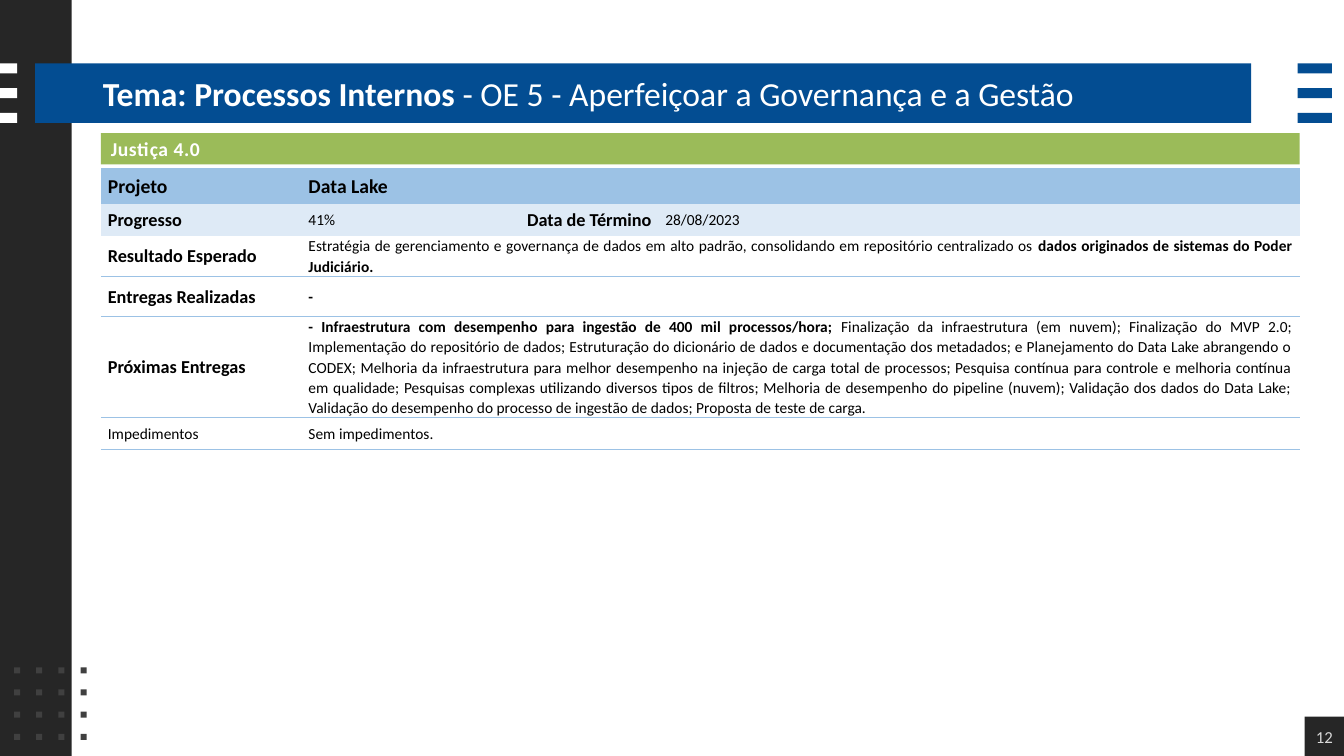
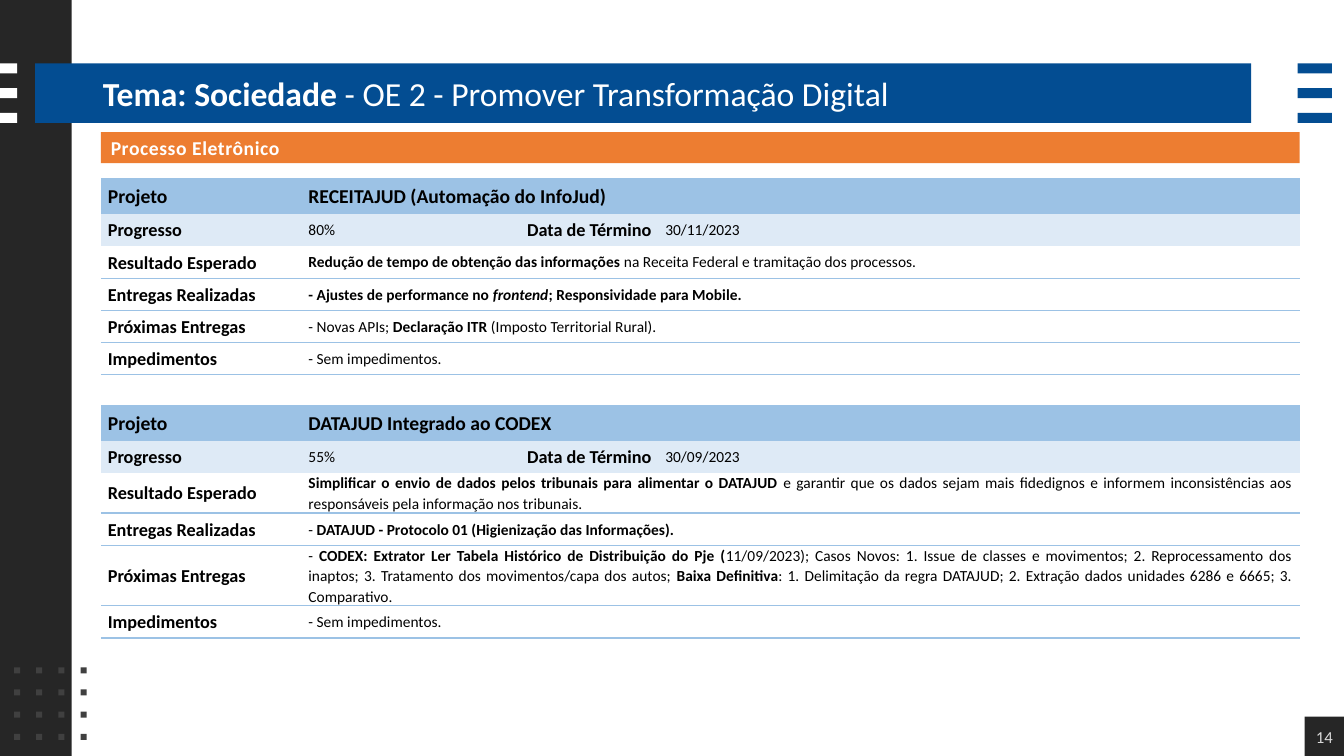
from lxml.etree import SubElement
from pptx import Presentation
from pptx.dml.color import RGBColor
from pptx.enum.shapes import MSO_SHAPE
from pptx.enum.text import MSO_ANCHOR, MSO_AUTO_SIZE, PP_ALIGN
from pptx.oxml.ns import qn
from pptx.util import Inches, Pt

THEME = dict(
    font="Calibri", dark="262626", blue="034D92", white="FFFFFF", dot="404040",
    page="D9D9D9", text="000000", head="9CC2E5", light="DEEAF6",
    green="9BBB59", orange="ED7D31",
    title_size=24, head_size=14, label_size=13, body_size=11, page_size=12)
NO_STYLE = "{2D5ABB26-0587-4C30-8999-92F81FD0307C}"

# Grid, in inches
W, H = 13.33, 7.5
LEFT, COLS = 1, (1.99, 1.77, 1.77, 6.36)
HEAD_H, ROW_H, LINE_H = 0.35, 0.32, 0.2
BAND_H = 0.31
BAR_TOP, BAR_STEP, BAR_H = 0.63, 0.245, 0.1
DOT_LEFT, DOT_TOP, DOT_STEP, DOT_SIZE = 0.14, 6.62, 0.22, 0.06
PAGE_BOX = (12.94, 7.11, 0.39, 0.39)

# Content: runs are (text, flags), with b for bold and i for italic;
# each row is (label, label flags, text lines, runs)
SLIDES = [
    dict(title=("Tema: Processos Internos ", "- OE 5 - Aperfeiçoar a Governança e a Gestão"),
         page="12", band=("Justiça 4.0", "green", 1.32),
         projects=[dict(
             top=1.67, name="Data Lake", progress="41%", end="28/08/2023",
             rows=[
                 ("Resultado Esperado", "b", 2, [
                     ("Estratégia de gerenciamento e governança de dados em alto padrão, "
                      "consolidando em repositório centralizado os ", ""),
                     ("dados originados de sistemas do Poder Judiciário.", "b")]),
                 ("Entregas Realizadas", "b", 2, [("-", "b")]),
                 ("Próximas Entregas", "b", 5, [
                     ("- Infraestrutura com desempenho para ingestão de "
                      "400 mil processos/hora;", "b"),
                     (" Finalização da infraestrutura (em nuvem); Finalização do MVP 2.0; "
                      "Implementação do repositório de dados; Estruturação do dicionário de "
                      "dados e documentação dos metadados; e Planejamento do Data Lake "
                      "abrangendo o CODEX; Melhoria da infraestrutura para melhor desempenho "
                      "na injeção de carga total de processos; Pesquisa contínua para controle "
                      "e melhoria contínua em qualidade; Pesquisas complexas utilizando "
                      "diversos tipos de filtros; Melhoria de desempenho do pipeline (nuvem); "
                      "Validação dos dados do Data Lake; Validação do desempenho do processo "
                      "de ingestão de dados; Proposta de teste de carga.", "")]),
                 ("Impedimentos", "", 1, [("Sem impedimentos.", "")]),
             ])]),
    dict(title=("Tema: Sociedade ", "- OE 2 - Promover Transformação Digital"),
         page="14", band=("Processo Eletrônico", "orange", 1.31),
         projects=[
             dict(top=1.77, name="RECEITAJUD (Automação do InfoJud)",
                  progress="80%", end="30/11/2023",
                  rows=[
                      ("Resultado Esperado", "b", 1, [
                          ("Redução de tempo de obtenção das informações ", "b"),
                          ("na Receita Federal e tramitação dos processos.", "")]),
                      ("Entregas Realizadas", "b", 1, [
                          ("- Ajustes de performance no ", "b"), ("frontend", "bi"),
                          ("; Responsividade para Mobile.", "b")]),
                      ("Próximas Entregas", "b", 1, [
                          ("- Novas APIs; ", ""), ("Declaração ITR", "b"),
                          (" (Imposto Territorial Rural).", "")]),
                      ("Impedimentos", "b", 1, [("- Sem impedimentos.", "")]),
                  ]),
             dict(top=4.02, name="DATAJUD Integrado ao CODEX",
                  progress="55%", end="30/09/2023",
                  rows=[
                      ("Resultado Esperado", "b", 2, [
                          ("Simplificar o envio de dados pelos tribunais para alimentar "
                           "o DATAJUD ", "b"),
                          ("e garantir que os dados sejam mais fidedignos e informem "
                           "inconsistências aos responsáveis pela informação nos "
                           "tribunais.", "")]),
                      ("Entregas Realizadas", "b", 1, [
                          ("- ", ""),
                          ("DATAJUD - Protocolo 01 (Higienização das Informações).", "b")]),
                      ("Próximas Entregas", "b", 3, [
                          ("- ", ""),
                          ("CODEX: Extrator Ler Tabela Histórico de Distribuição do Pje (", "b"),
                          ("11/09/2023); Casos Novos: 1. Issue de classes e movimentos; "
                           "2. Reprocessamento dos inaptos; 3. Tratamento dos "
                           "movimentos/capa dos autos; ", ""),
                          ("Baixa Definitiva", "b"),
                          (": 1. Delimitação da regra DATAJUD; 2. Extração dados unidades "
                           "6286 e 6665; 3. Comparativo.", "")]),
                      ("Impedimentos", "b", 1, [("- Sem impedimentos.", "")]),
                  ]),
         ]),
]


def rgb(name):
    return RGBColor.from_string(THEME[name])


def place(sp, *box):
    for side, value in zip(("left", "top", "width", "height"), box):
        setattr(sp, side, Inches(value))


def write(p, runs, size, color="text", align=PP_ALIGN.LEFT, spc=None):
    p.alignment = align
    for text, flags in runs:
        r = p.add_run()
        r.text = text
        look = dict(name=THEME["font"], size=Pt(THEME[size]),
                    bold="b" in flags, italic="i" in flags)
        for key, value in look.items():
            setattr(r.font, key, value)
        r.font.color.rgb = rgb(color)
        if spc:
            r.font._element.set("spc", str(spc))


def add_rect(s, color, *box):
    sp = s.shapes.add_shape(MSO_SHAPE.RECTANGLE, *map(Inches, box))
    sp.shadow.inherit = False
    sp.fill.solid()
    sp.fill.fore_color.rgb = rgb(color)
    sp.line.fill.background()
    return sp


def build_frame(s, layout):
    """Draw the shared decoration and hand it over to the layout."""
    rects = [("dark", 0, 0, 0.71, H), ("blue", 0.35, BAR_TOP, 12.06, 0.59)]
    for color, left, width in (("white", 0, 0.17), ("blue", 12.87, 0.34)):
        rects += [(color, left, BAR_TOP + i * BAR_STEP, width, BAR_H) for i in range(3)]
    rects += [("dot", DOT_LEFT + col * DOT_STEP, DOT_TOP + row * DOT_STEP, DOT_SIZE, DOT_SIZE)
              for row in range(4) for col in range(4)]
    rects.append(("dark", *PAGE_BOX))
    for rect in rects:
        layout.shapes.element.append(add_rect(s, *rect).element)


def prepare_layout(layout):
    for ph in list(layout.placeholders):
        if ph.placeholder_format.idx:
            ph.element.getparent().remove(ph.element)
        else:
            place(ph, 0.92, 0.64, 11.5, 0.56)


def add_borders(cell, sides):
    tcPr = cell._tc.get_or_add_tcPr()
    for side in sides:
        ln = SubElement(tcPr, qn(f"a:ln{side}"), w=str(Pt(1)))
        fill = SubElement(ln, qn("a:solidFill"))
        SubElement(fill, qn("a:srgbClr"), val=THEME["head"])


def fill_cell(cell, runs, size, align=PP_ALIGN.LEFT):
    p = cell.text_frame.paragraphs[0]
    p.line_spacing, p.space_after = 1.07, Pt(8)
    write(p, runs, size, align=align)


def add_project(s, top, name, progress, end, rows):
    heights = [HEAD_H, ROW_H] + [max(ROW_H, LINE_H * lines) for _, _, lines, _ in rows]
    frame = s.shapes.add_table(len(heights), len(COLS), Inches(LEFT), Inches(top),
                               Inches(sum(COLS)), Inches(sum(heights)))
    tbl = frame.table
    tbl.first_row = tbl.horz_banding = False
    tbl._tbl.tblPr.find(qn("a:tableStyleId")).text = NO_STYLE
    for col, width in zip(tbl.columns, COLS):
        col.width = Inches(width)

    # Cell formats
    for i, height in enumerate(heights):
        tbl.rows[i].height = Inches(height)
        for j in range(len(COLS)):
            cell = tbl.cell(i, j)
            cell.margin_left = cell.margin_right = Inches(0.07)
            cell.margin_top = cell.margin_bottom = 0
            cell.vertical_anchor = MSO_ANCHOR.MIDDLE
            if i < 2:
                cell.fill.solid()
                cell.fill.fore_color.rgb = rgb(("head", "light")[i])
            else:
                add_borders(cell, "B" if i == 2 else "TB")
                cell.fill.background()
        if i != 1:
            tbl.cell(i, 1).merge(tbl.cell(i, 3))

    # Cell texts
    fill_cell(tbl.cell(0, 0), [("Projeto", "b")], "head_size")
    fill_cell(tbl.cell(0, 1), [(name, "b")], "head_size")
    fill_cell(tbl.cell(1, 0), [("Progresso", "b")], "label_size")
    fill_cell(tbl.cell(1, 1), [(progress, "")], "body_size")
    fill_cell(tbl.cell(1, 2), [("Data de Término", "b")], "label_size", PP_ALIGN.RIGHT)
    fill_cell(tbl.cell(1, 3), [(end, "")], "body_size")
    for i, (label, flags, _, runs) in enumerate(rows, 2):
        fill_cell(tbl.cell(i, 0), [(label, flags)], "label_size" if flags else "body_size")
        fill_cell(tbl.cell(i, 1), runs, "body_size", PP_ALIGN.JUSTIFY)


def add_page_number(s, number):
    tf = s.shapes.add_textbox(*map(Inches, PAGE_BOX)).text_frame
    for side in ("left", "top", "right", "bottom"):
        setattr(tf, f"margin_{side}", 0)
    tf.word_wrap, tf.vertical_anchor = True, MSO_ANCHOR.MIDDLE
    write(tf.paragraphs[0], [(number, "")], "page_size", "page", PP_ALIGN.CENTER)


def add_band(s, text, color, top):
    tf = add_rect(s, color, LEFT, top, sum(COLS), BAND_H).text_frame
    tf.vertical_anchor = MSO_ANCHOR.MIDDLE
    write(tf.paragraphs[0], [(text, "b")], "head_size", "white", spc=40)


def main():
    prs = Presentation()
    prs.slide_width, prs.slide_height = Inches(W), Inches(H)
    layout = prs.slide_layouts[5]
    prepare_layout(layout)
    for n, content in enumerate(SLIDES):
        s = prs.slides.add_slide(layout)
        if n == 0:
            build_frame(s, layout)
        tf = s.shapes.title.text_frame
        tf.auto_size, tf.vertical_anchor = MSO_AUTO_SIZE.NONE, MSO_ANCHOR.MIDDLE
        write(tf.paragraphs[0], zip(content["title"], ("b", "")), "title_size", "white")
        add_page_number(s, content["page"])
        add_band(s, *content["band"])
        for project in content["projects"]:
            add_project(s, **project)
    prs.save("out.pptx")


if __name__ == "__main__":
    main()
